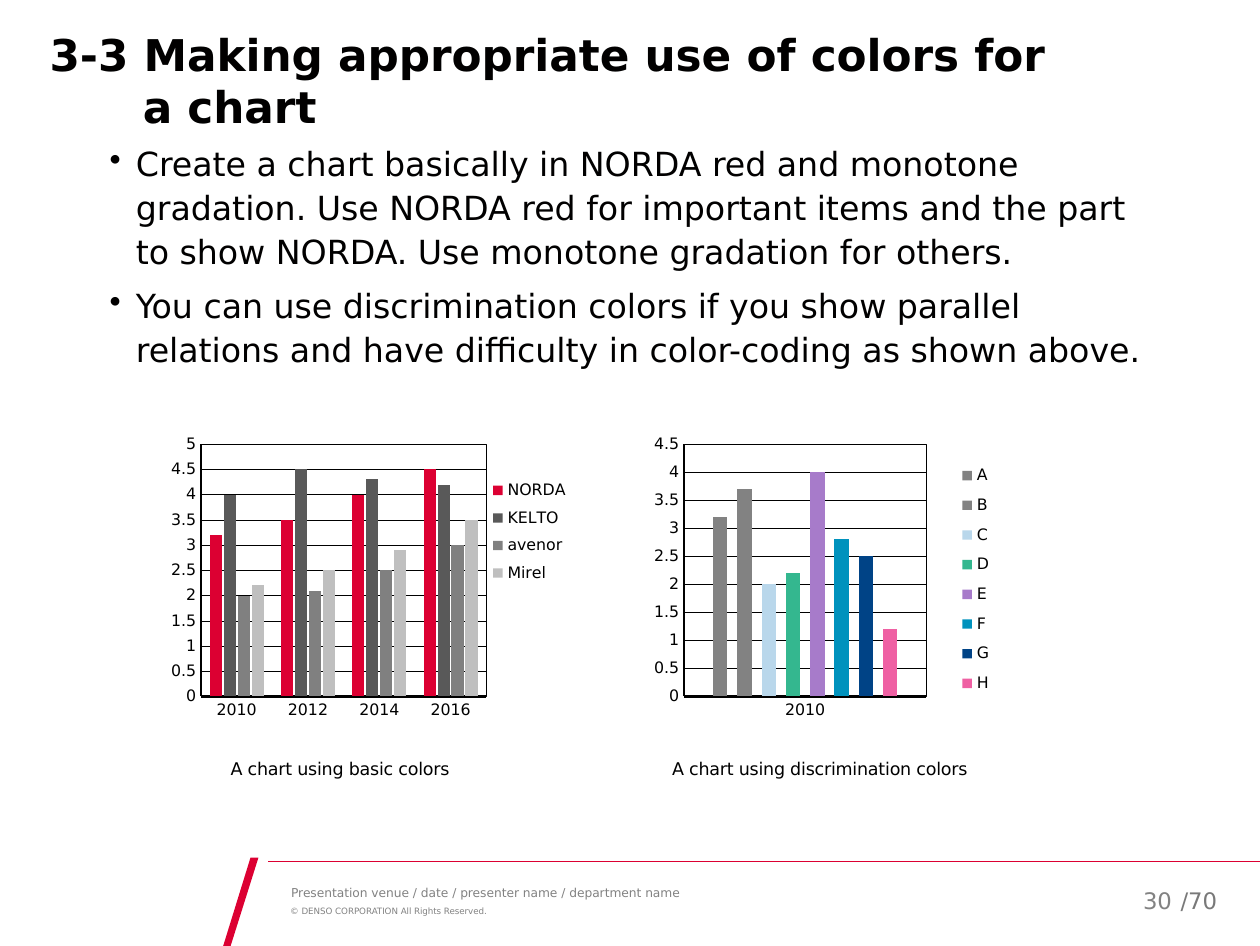
from dataclasses import dataclass

from lxml.etree import SubElement
from pptx import Presentation
from pptx.chart.data import CategoryChartData
from pptx.dml.color import RGBColor
from pptx.enum.chart import XL_CHART_TYPE, XL_LEGEND_POSITION, XL_TICK_MARK
from pptx.enum.shapes import MSO_CONNECTOR
from pptx.enum.text import MSO_ANCHOR, PP_ALIGN
from pptx.oxml import parse_xml
from pptx.oxml.ns import nsdecls, qn
from pptx.util import Cm, Pt


@dataclass(frozen=True)
class Theme:
    font: str = "DejaVu Sans"
    ink: str = "010000"
    black: str = "000000"
    red: str = "DC0032"
    grey: str = "828282"
    page_grey: str = "797979"
    title: float = 25
    body: float = 19
    page_number: float = 13
    caption: float = 10
    axis: float = 9
    footer: float = 7
    copyright: float = 5


@dataclass(frozen=True)
class Area:
    left: float
    top: float
    width: float
    height: float


@dataclass(frozen=True)
class Label:
    paragraphs: tuple[str, ...]
    area: Area
    size: float
    color: str
    insets: tuple[float, float, float, float] = (0, 0, 0, 0)
    bold: bool = False
    wrap: bool = True
    align: PP_ALIGN = PP_ALIGN.LEFT
    anchor: MSO_ANCHOR = MSO_ANCHOR.TOP
    margin: float = 0
    indent: float = 0
    bullet: str = ""
    line_spacing: float = 1.0
    space_after: float = 0
    tracking: int = 0


@dataclass(frozen=True)
class Series:
    name: str
    values: tuple[float, ...]
    color: str


@dataclass(frozen=True)
class ColumnChart:
    area: Area
    categories: tuple[str, ...]
    series: tuple[Series, ...]
    maximum: float
    gap: int
    overlap: int
    plot: Area
    legend: Area


THEME = Theme()
PADDING = (0.25, 0.13, 0.25, 0.13)
CHART_TOP, CHART_HEIGHT = 8.56, 6.88
CAPTION_TOP, CAPTION_HEIGHT = 15.24, 0.48

LABELS = (
    Label(("/70",), Area(23.55, 17.75, 1.32, 0.81), THEME.page_number, THEME.page_grey,
          insets=PADDING, wrap=False, anchor=MSO_ANCHOR.MIDDLE),
    Label(("30 ",), Area(21.18, 17.65, 2.84, 1.02), THEME.page_number, THEME.grey,
          insets=PADDING, align=PP_ALIGN.RIGHT, anchor=MSO_ANCHOR.MIDDLE),
    Label(("Presentation venue / date / presenter name / department name",),
          Area(5.82, 17.86, 16, 0.3), THEME.footer, THEME.grey, margin=0.05),
    Label(("© DENSO CORPORATION All Rights Reserved.",),
          Area(5.82, 18.26, 16, 0.2), THEME.copyright, THEME.grey, margin=0.03, tracking=-5),
    Label(("3-3 Making appropriate use of colors for a chart",),
          Area(0, 0.56, 25.4, 0.99), THEME.title, THEME.ink,
          insets=(1, 0, 3.99, 0), bold=True, margin=1.88, indent=-1.88),
    Label(("Create a chart basically in NORDA red and monotone gradation. Use NORDA red for "
           "important items and the part to show NORDA. Use monotone gradation for others.",
           "You can use discrimination colors if you show parallel relations and have "
           "difficulty in color-coding as shown above."),
          Area(1.93, 2.69, 21.59, 4.85), THEME.body, THEME.ink, insets=PADDING,
          margin=0.56, indent=-0.53, bullet="•", line_spacing=1.1, space_after=6),
    Label(("A chart using basic colors",),
          Area(4.57, CAPTION_TOP, 4.57, CAPTION_HEIGHT), THEME.caption, THEME.black,
          wrap=False, align=PP_ALIGN.CENTER, line_spacing=1.1, tracking=-10),
    Label(("A chart using discrimination colors",),
          Area(13.44, CAPTION_TOP, 6.17, CAPTION_HEIGHT), THEME.caption, THEME.black,
          wrap=False, align=PP_ALIGN.CENTER, line_spacing=1.1, tracking=-10),
)

CHARTS = (
    ColumnChart(
        Area(2.87, CHART_TOP, 8.97, CHART_HEIGHT), ("2010", "2012", "2014", "2016"),
        (Series("NORDA", (3.2, 3.5, 4, 4.5), THEME.red),
         Series("KELTO", (4, 4.5, 4.3, 4.2), "595959"),
         Series("avenor", (2, 2.1, 2.5, 3), "808080"),
         Series("Mirel", (2.2, 2.5, 2.9, 3.5), "BFBFBF")),
        5, 142, -15, Area(0.132, 0.058, 0.641, 0.74), Area(0.77, 0.14, 0.2, 0.35)),
    ColumnChart(
        Area(13.13, CHART_TOP, 7.19, CHART_HEIGHT), ("2010",),
        (Series("A", (3.2,), THEME.grey), Series("B", (3.7,), THEME.grey),
         Series("C", (2,), "B9D7EB"), Series("D", (2.2,), "34B78F"),
         Series("E", (4,), "A77BCA"), Series("F", (2.8,), "0092BD"),
         Series("G", (2.5,), "004386"), Series("H", (1.2,), "EF60A3")),
        4.5, 400, -69, Area(0.092, 0.058, 0.679, 0.74), Area(0.86, 0.09, 0.1, 0.73)),
)


def place(area: Area) -> tuple[Cm, Cm, Cm, Cm]:
    return Cm(area.left), Cm(area.top), Cm(area.width), Cm(area.height)


def set_font(font, size: float, color: str, bold: bool = False) -> None:
    font.name, font.size, font.bold = THEME.font, Pt(size), bold
    font.color.rgb = RGBColor.from_string(color)


def set_line(line, color: str, width: float) -> None:
    line.color.rgb = RGBColor.from_string(color)
    line.width = Pt(width)


def draw_label(page, label: Label) -> None:
    frame = page.shapes.add_textbox(*place(label.area)).text_frame
    frame.word_wrap, frame.vertical_anchor = label.wrap, label.anchor
    (frame.margin_left, frame.margin_top,
     frame.margin_right, frame.margin_bottom) = map(Cm, label.insets)
    frame.text = "\n".join(label.paragraphs)
    for paragraph in frame.paragraphs:
        paragraph.alignment = label.align
        paragraph.line_spacing = label.line_spacing
        paragraph.space_after = Pt(label.space_after)
        properties = paragraph._p.get_or_add_pPr()
        properties.set("marL", str(Cm(label.margin)))
        properties.set("indent", str(Cm(label.indent)))
        if label.bullet:
            SubElement(properties, qn("a:buChar"), char=label.bullet)
        for span in paragraph.runs:
            set_font(span.font, label.size, label.color, label.bold)
            if label.tracking:
                span._r.get_or_add_rPr().set("spc", str(label.tracking))


def manual_layout(area: Area, inner: bool = False):
    target = '<c:layoutTarget val="inner"/>' if inner else ""
    return parse_xml(
        f'<c:layout {nsdecls("c")}><c:manualLayout>{target}'
        '<c:xMode val="edge"/><c:yMode val="edge"/>'
        f'<c:x val="{area.left}"/><c:y val="{area.top}"/>'
        f'<c:w val="{area.width}"/><c:h val="{area.height}"/></c:manualLayout></c:layout>')


def draw_chart(page, design: ColumnChart) -> None:
    data = CategoryChartData()
    data.categories = design.categories
    for series in design.series:
        data.add_series(series.name, series.values)
    chart = page.shapes.add_chart(
        XL_CHART_TYPE.COLUMN_CLUSTERED, *place(design.area), data).chart
    set_font(chart.font, THEME.caption, THEME.black)
    chart.has_title = False
    plot = chart.plots[0]
    plot.gap_width, plot.overlap, plot.vary_by_categories = design.gap, design.overlap, False
    for drawn, series in zip(plot.series, design.series):
        drawn.format.fill.solid()
        drawn.format.fill.fore_color.rgb = RGBColor.from_string(series.color)
    for axis in (chart.category_axis, chart.value_axis):
        axis.major_tick_mark = axis.minor_tick_mark = XL_TICK_MARK.NONE
        set_font(axis.tick_labels.font, THEME.axis, THEME.black)
        set_line(axis.format.line, THEME.black, 1.5)
    scale = chart.value_axis
    scale.minimum_scale, scale.maximum_scale, scale.major_unit = 0, design.maximum, 0.5
    set_line(scale.major_gridlines.format.line, THEME.black, 0.25)
    chart.has_legend = True
    legend = chart.legend
    legend.position, legend.include_in_layout = XL_LEGEND_POSITION.RIGHT, False
    set_font(legend.font, THEME.axis, THEME.black)
    for element in legend._element.findall(qn("c:layout")):
        legend._element.remove(element)
    legend._element.find(qn("c:legendPos")).addnext(manual_layout(design.legend))
    plot_area = chart._chartSpace.chart.plotArea
    for element in plot_area.findall(qn("c:layout")):
        plot_area.remove(element)
    plot_area.insert(0, manual_layout(design.plot, inner=True))
    plot_area.append(parse_xml(
        f'<c:spPr {nsdecls("c", "a")}><a:noFill/><a:ln w="{Pt(0.25)}"><a:solidFill>'
        f'<a:srgbClr val="{THEME.black}"/></a:solidFill></a:ln></c:spPr>'))


def draw_footer_marks(page) -> None:
    rule = page.shapes.add_connector(
        MSO_CONNECTOR.STRAIGHT, Cm(5.41), Cm(17.37), Cm(25.4), Cm(17.37))
    set_line(rule.line, THEME.red, 0.5)
    SubElement(rule._element.spPr, qn("a:effectLst"))
    outline = page.shapes.build_freeform(Cm(5.21), Cm(17.3))
    outline.add_line_segments(
        [(Cm(x), Cm(y)) for x, y in ((5.05, 17.3), (4.5, 19.08), (4.65, 19.08))], close=True)
    slash = outline.convert_to_shape()
    slash.shadow.inherit = False
    slash.fill.solid()
    slash.fill.fore_color.rgb = RGBColor.from_string(THEME.red)
    slash.line.fill.background()


def main() -> None:
    deck = Presentation()
    deck.slide_width, deck.slide_height = Cm(25.4), Cm(19.08)
    page = deck.slides.add_slide(deck.slide_layouts[6])
    draw_footer_marks(page)
    for label in LABELS:
        draw_label(page, label)
    for design in CHARTS:
        draw_chart(page, design)
    deck.save("out.pptx")


if __name__ == "__main__":
    main()
